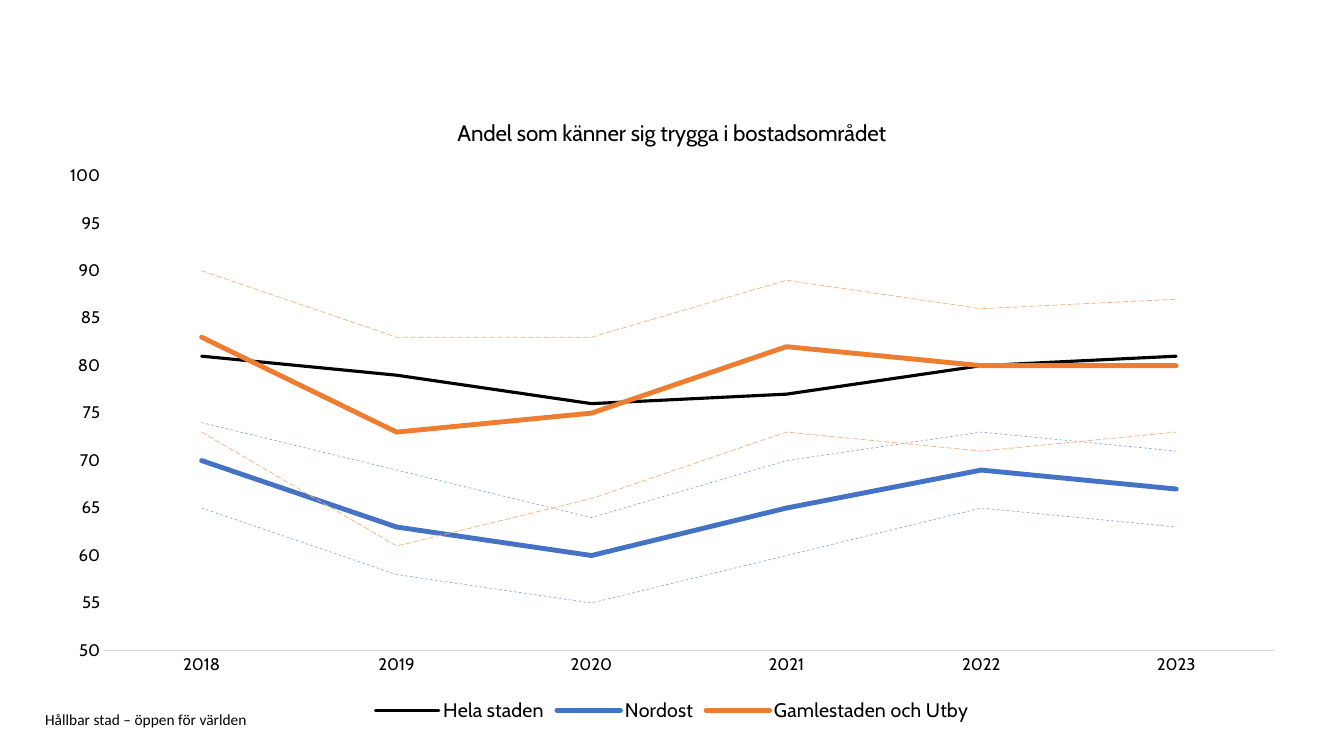
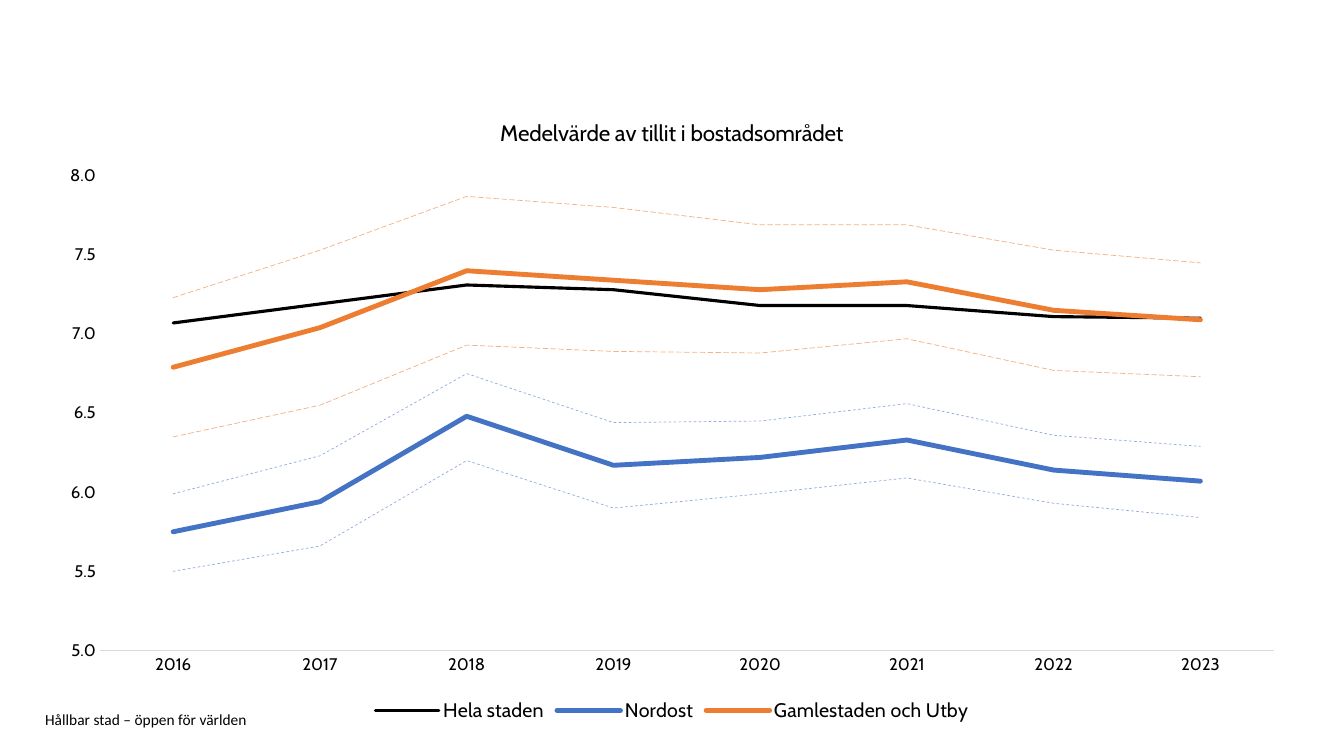
from lxml import etree
from pptx import Presentation
from pptx.chart.data import CategoryChartData
from pptx.dml.color import RGBColor
from pptx.enum.chart import XL_CHART_TYPE, XL_LEGEND_POSITION, XL_TICK_MARK
from pptx.enum.dml import MSO_LINE
from pptx.enum.text import MSO_ANCHOR
from pptx.oxml.ns import qn
from pptx.util import Pt

PX = 9525  # EMU per px, 96 px to the inch
SLIDE_WIDTH, SLIDE_HEIGHT = 1280, 720
CHART_BOX = (43, 91, 1194, 601)
FOOTER_BOX = (43, 678, 907, 15)

BLACK = RGBColor(0x00, 0x00, 0x00)
AXIS_GREY = RGBColor(0xD9, 0xD9, 0xD9)
BLUE = RGBColor(0x44, 0x72, 0xC4)
LIGHT_BLUE = RGBColor(0x8F, 0xAA, 0xDC)
ORANGE = RGBColor(0xED, 0x7D, 0x31)
LIGHT_ORANGE = RGBColor(0xF4, 0xB1, 0x83)

LINE_CHART = XL_CHART_TYPE.LINE
LEGEND_BOTTOM = XL_LEGEND_POSITION.BOTTOM
NO_TICK = XL_TICK_MARK.NONE
SOLID, DASH, LONG_DASH = MSO_LINE.SOLID, MSO_LINE.DASH, MSO_LINE.LONG_DASH
MIDDLE = MSO_ANCHOR.MIDDLE

CHART_FONT, FOOTER_FONT = "Cabin", "Calibri"
FOOTER = "Hållbar stad – öppen för världen"

# Name, colour, width in points, dash, shown in the legend
SERIES_STYLES = [
    ("Hela staden", BLACK, 2.25, SOLID, True),
    ("Nordost", BLUE, 3.5, SOLID, True),
    ("Series 3", LIGHT_BLUE, 0.5, DASH, False),
    ("Series 4", LIGHT_BLUE, 0.5, DASH, False),
    ("Gamlestaden och Utby", ORANGE, 3.5, SOLID, True),
    ("Series 6", LIGHT_ORANGE, 0.5, LONG_DASH, False),
    ("Series 7", LIGHT_ORANGE, 0.5, LONG_DASH, False),
]

# One entry per slide; values in the order of SERIES_STYLES
CHARTS = [
    {
        "title": "Andel som känner sig trygga i bostadsområdet",
        "years": range(2018, 2024),
        "number_format": "0",
        "scale": {"minimum_scale": 50, "maximum_scale": 100, "major_unit": 5},
        "values": [
            (81, 79, 76, 77, 80, 81),
            (70, 63, 60, 65, 69, 67),
            (65, 58, 55, 60, 65, 63),
            (74, 69, 64, 70, 73, 71),
            (83, 73, 75, 82, 80, 80),
            (73, 61, 66, 73, 71, 73),
            (90, 83, 83, 89, 86, 87),
        ],
    },
    {
        "title": "Medelvärde av tillit i bostadsområdet",
        "years": range(2016, 2024),
        "number_format": "0.0",
        "scale": {"minimum_scale": 5, "maximum_scale": 8, "major_unit": 0.5},
        "values": [
            (7.07, 7.19, 7.31, 7.28, 7.18, 7.18, 7.11, 7.1),
            (5.75, 5.94, 6.48, 6.17, 6.22, 6.33, 6.14, 6.07),
            (5.5, 5.66, 6.2, 5.9, 5.99, 6.09, 5.93, 5.84),
            (5.99, 6.23, 6.75, 6.44, 6.45, 6.56, 6.36, 6.29),
            (6.79, 7.04, 7.4, 7.34, 7.28, 7.33, 7.15, 7.09),
            (6.35, 6.55, 6.93, 6.89, 6.88, 6.97, 6.77, 6.73),
            (7.23, 7.53, 7.87, 7.8, 7.69, 7.69, 7.53, 7.45),
        ],
    },
]


def scaled(box):
    return [length * PX for length in box]


def set_attributes(target, values):
    for name, value in values.items():
        setattr(target, name, value)


def set_font(font, name, size, bold=False):
    set_attributes(font, {"name": name, "size": Pt(size), "bold": bold})
    font.color.rgb = BLACK


def add_footer(slide):
    frame = slide.shapes.add_textbox(*scaled(FOOTER_BOX)).text_frame
    set_attributes(frame, {
        "word_wrap": True, "vertical_anchor": MIDDLE,
        "margin_left": 0, "margin_top": 0, "margin_right": 0, "margin_bottom": 0,
    })
    paragraph = frame.paragraphs[0]
    paragraph.text = FOOTER
    set_font(paragraph.font, FOOTER_FONT, 11)


def format_title(chart, text):
    chart.has_title = True
    title = chart.chart_title
    title.include_in_layout = False
    paragraph = title.text_frame.paragraphs[0]
    run = paragraph.add_run()
    run.text = text
    set_font(run.font, CHART_FONT, 16)


def format_axes(chart, details):
    no_ticks = {"major_tick_mark": NO_TICK, "minor_tick_mark": NO_TICK,
                "has_major_gridlines": False}
    category_axis, value_axis = chart.category_axis, chart.value_axis
    set_attributes(category_axis, no_ticks)
    category_axis.format.line.color.rgb = AXIS_GREY
    category_axis.format.line.width = Pt(0.75)
    set_attributes(value_axis, {**no_ticks, **details["scale"]})
    value_axis.format.line.fill.background()
    set_attributes(value_axis.tick_labels, {
        "number_format": details["number_format"],
        "number_format_is_linked": False,
    })


def format_series(chart):
    for series, (_, color, width, dash, _) in zip(chart.series, SERIES_STYLES):
        series.smooth = False
        line = series.format.line
        line.color.rgb = color
        set_attributes(line, {"width": Pt(width), "dash_style": dash})
        series.format.line.fill  # the line element exists from here on
        series._element.spPr.find(qn("a:ln")).set("cap", "rnd")


def format_legend(chart):
    chart.has_legend = True
    legend = chart.legend
    set_attributes(legend, {"position": LEGEND_BOTTOM, "include_in_layout": False})
    set_font(legend.font, CHART_FONT, 14)
    # Hide the interval limits
    previous = legend._element.find(qn("c:legendPos"))
    for index, (*_, shown) in enumerate(SERIES_STYLES):
        if not shown:
            entry = etree.Element(qn("c:legendEntry"))
            etree.SubElement(entry, qn("c:idx")).set("val", str(index))
            etree.SubElement(entry, qn("c:delete")).set("val", "1")
            previous.addnext(entry)
            previous = entry


def add_line_chart(slide, details):
    data = CategoryChartData(number_format=details["number_format"])
    data.categories = [str(year) for year in details["years"]]
    for (name, *_), values in zip(SERIES_STYLES, details["values"]):
        data.add_series(name, values)
    chart = slide.shapes.add_chart(LINE_CHART, *scaled(CHART_BOX), data).chart
    chart.plots[0].vary_by_categories = False
    set_font(chart.font, CHART_FONT, 12)
    format_title(chart, details["title"])
    format_axes(chart, details)
    format_series(chart)
    format_legend(chart)


def main():
    presentation = Presentation()
    presentation.slide_width, presentation.slide_height = scaled(
        (SLIDE_WIDTH, SLIDE_HEIGHT))
    blank_layout = presentation.slide_layouts[6]
    for details in CHARTS:
        slide = presentation.slides.add_slide(blank_layout)
        add_footer(slide)
        add_line_chart(slide, details)
    presentation.save("out.pptx")


if __name__ == "__main__":
    main()
